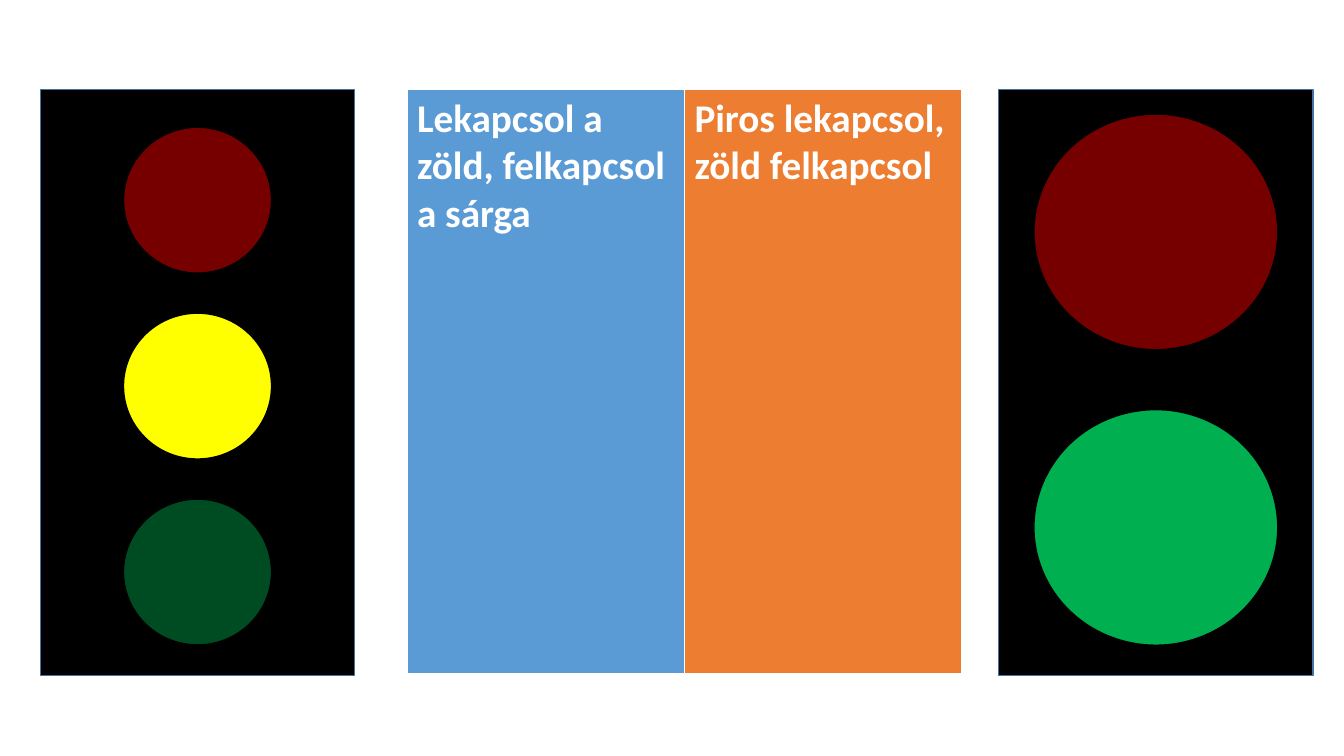
from lxml.etree import SubElement as Sub
from pptx import Presentation
from pptx.dml.color import RGBColor as Rgb
from pptx.enum.shapes import MSO_SHAPE as Form
from pptx.oxml.ns import qn
from pptx.util import Pt

HUES = {
    "case": "000000",
    "edge": "43739E",
    "red": "760000",
    "amber": "FFFF00",
    "dark": "004C22",
    "green": "00B050",
    "blue": "5B9BD5",
    "orange": "ED7D31",
    "white": "FFFFFF",
}
TOP, HIGH = 64.1, 418.3
WIDE = 224.6


def hue(name):
    return Rgb.from_string(HUES[name])


def add_form(group, form, box, fill, edge):
    shape = group.shapes.add_shape(form, *map(Pt, box))
    shape.shadow.inherit = False
    shape.fill.solid()
    shape.fill.fore_color.rgb = hue(fill)
    shape.line.color.rgb = hue(edge)
    shape.line.width = Pt(1)


def add_light(slide, left, top, size, step, lamps):
    group = slide.shapes.add_group_shape()
    add_form(group, Form.RECTANGLE, (left, TOP, WIDE, HIGH), "case", "edge")
    wide, high = size
    inset = left + (WIDE - wide) / 2
    for row, lamp in enumerate(lamps):
        box = (inset, top + row * step, wide, high)
        add_form(group, Form.OVAL, box, lamp, "case")


def add_edge(cell, side, width):
    line = Sub(cell._tc.get_or_add_tcPr(), qn("a:ln" + side), w=str(Pt(width)))
    Sub(Sub(line, qn("a:solidFill")), qn("a:srgbClr"), val=HUES["white"])


def fill_cell(cell, text, fill):
    for side, width in (("L", 1), ("R", 1), ("T", 1), ("B", 3)):
        add_edge(cell, side, width)
    cell.fill.solid()
    cell.fill.fore_color.rgb = hue(fill)
    run = cell.text_frame.paragraphs[0].add_run()
    run.text = text
    run.font.name = "Calibri"
    run.font.size = Pt(28)
    run.font.bold = True
    run.font.color.rgb = hue("white")


def add_steps(slide, left, wide, steps):
    box = map(Pt, (left, TOP, wide, HIGH))
    table = slide.shapes.add_table(1, len(steps), *box).table
    for col, (text, fill) in enumerate(steps):
        fill_cell(table.cell(0, col), text, fill)


def main():
    deck = Presentation()
    deck.slide_width, deck.slide_height = Pt(960), Pt(540)
    slide = deck.slides.add_slide(deck.slide_layouts[6])
    add_light(slide, 28.8, 90.9, (105.8, 104.2), 132.8, ("red", "amber", "dark"))
    add_light(slide, 713.3, 81.5, (174.2, 168.3), 211.1, ("red", "green"))
    add_steps(slide, 290.7, 396.4, (
        ("Lekapcsol a zöld, felkapcsol a sárga", "blue"),
        ("Piros lekapcsol, zöld felkapcsol", "orange"),
    ))
    deck.save("out.pptx")


if __name__ == "__main__":
    main()
